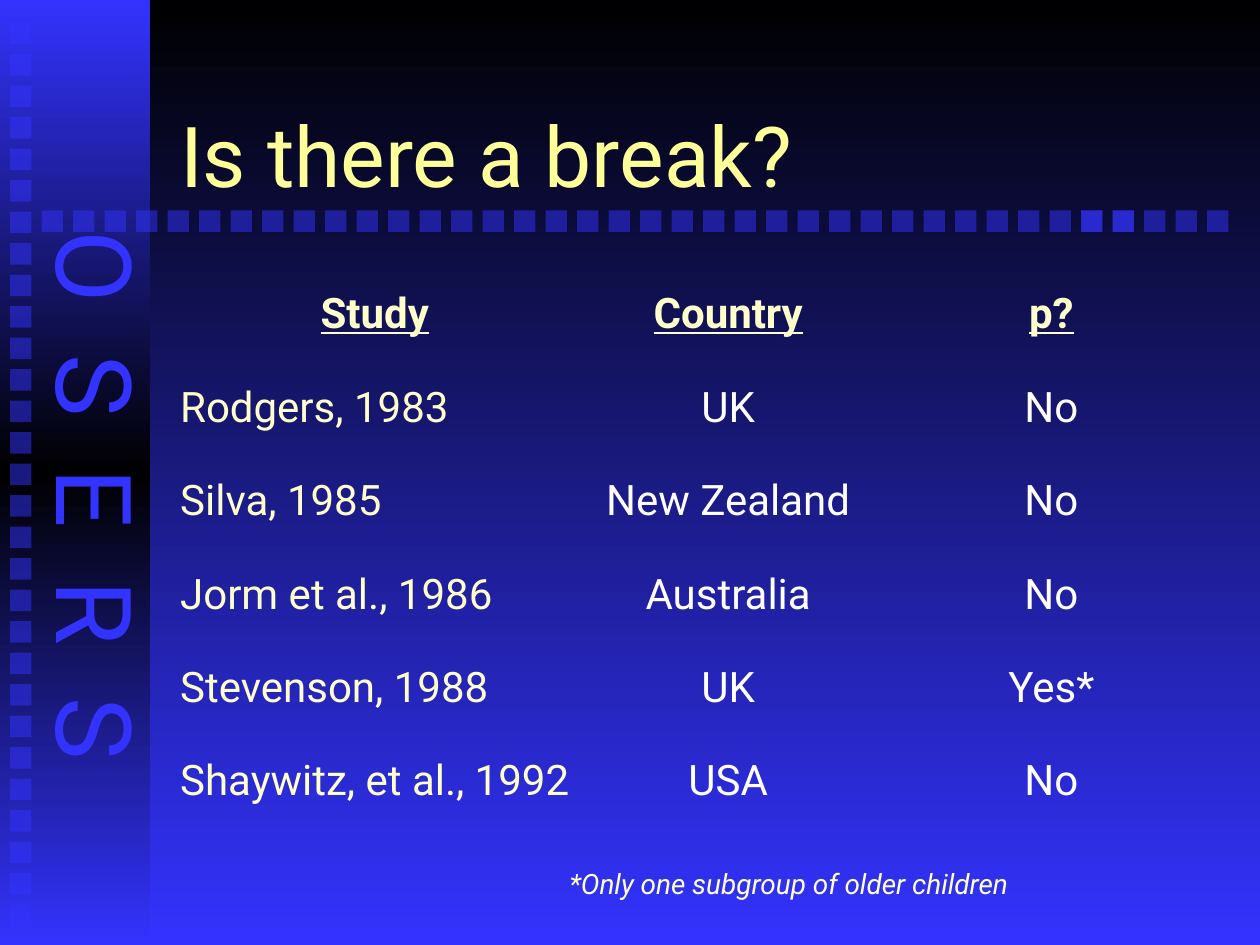
"""Build the slide that lists studies testing for a break."""
from copy import deepcopy
from dataclasses import dataclass
from typing import Any

from lxml.etree import SubElement
from pptx import Presentation
from pptx.dml.color import RGBColor
from pptx.dml.fill import FillFormat
from pptx.enum.shapes import MSO_SHAPE as Preset
from pptx.enum.text import MSO_ANCHOR as Anchor, MSO_AUTO_SIZE as AutoSize, PP_ALIGN as Align
from pptx.oxml.ns import qn
from pptx.slide import Slide
from pptx.text.text import TextFrame
from pptx.util import Inches, Pt


@dataclass(frozen=True)
class Theme:
    font: str = "Roboto"
    blue: str = "3333FF"
    black: str = "000000"
    white: str = "FFFFFF"
    cream: str = "FFFFCC"
    yellow: str = "FFFF99"
    title_size: int = 48
    banner_size: int = 60
    table_size: int = 24
    note_size: int = 16


@dataclass(frozen=True)
class Box:
    left: float
    top: float
    width: float
    height: float

    def lengths(self) -> tuple[int, ...]:
        """Return the box as slide lengths."""
        return tuple(Inches(value) for value in (self.left, self.top, self.width, self.height))


@dataclass(frozen=True)
class Strip:
    left: float
    top: float
    step_x: float
    step_y: float
    count: int


@dataclass(frozen=True)
class Study:
    name: str
    country: str
    significant: str


THEME = Theme()
SQUARE = 0.17
STEP = 0.25
STRIPS = (
    Strip(0.08, 0.18, 0, STEP, 29),
    Strip(0.33, 1.67, STEP, 0, 35),
    Strip(8.58, 1.67, STEP, 0, 5),
)
STUDIES = (
    Study("Rodgers, 1983", "UK", "No"),
    Study("Silva, 1985", "New Zealand", "No"),
    Study("Jorm et al., 1986", "Australia", "No"),
    Study("Stevenson, 1988", "UK", "Yes*"),
    Study("Shaywitz, et al., 1992", "USA", "No"),
)
COLUMN_WIDTHS = (3.29, 2.32, 2.81)
NO_GRID_STYLE = "{2D5ABB26-0587-4C30-8999-92F81FD0307C}"


def apply(target: Any, formats: dict[str, Any]) -> None:
    """Set each named attribute on the target."""
    for name, value in formats.items():
        setattr(target, name, value)


def write(frame: TextFrame, text: str, size: int, color: str,
          paragraph_formats: dict[str, Any] | None = None, **font_formats: Any) -> None:
    """Write one formatted paragraph into the frame."""
    paragraph = frame.paragraphs[0]
    apply(paragraph, {"alignment": Align.LEFT, **(paragraph_formats or {})})
    run = paragraph.add_run()
    run.text = text
    apply(run.font, {"name": THEME.font, "size": Pt(size), "bold": False, **font_formats})
    run.font.color.rgb = RGBColor.from_string(color)


def paint_gradient(fill: FillFormat, element: Any, colors: tuple[str, ...]) -> None:
    """Fill with evenly spaced colours from top to bottom."""
    fill.gradient()
    fill.gradient_angle = 270
    stop_list = element.find(".//" + qn("a:gsLst"))
    while len(stop_list) < len(colors):
        stop_list.append(deepcopy(stop_list[0]))
    for index, (stop, color) in enumerate(zip(fill.gradient_stops, colors)):
        stop.position = index / (len(colors) - 1)
        stop.color.rgb = RGBColor.from_string(color)


def add_side_panel(slide: Slide) -> None:
    """Add the gradient panel at the left edge."""
    panel = slide.shapes.add_shape(Preset.RECTANGLE, *Box(0, 0, 1.19, 7.5).lengths())
    panel.shadow.inherit = False
    panel.line.fill.background()
    paint_gradient(panel.fill, panel.element, (THEME.blue, THEME.black, THEME.blue))


def add_banner(slide: Slide) -> None:
    """Add the vertical lettering on the side panel."""
    frame = slide.shapes.add_textbox(*Box(0.25, 1.83, 0.92, 4.67).lengths()).text_frame
    apply(frame, {"word_wrap": True, "margin_left": 0, "margin_top": 0,
                  "margin_right": 0, "margin_bottom": 0})
    body = frame.paragraphs[0]._p.getparent().find(qn("a:bodyPr"))
    body.set("vert", "eaVert")
    write(frame, "O S E R S", THEME.banner_size, THEME.blue, {"line_spacing": 0.9})
    frame.paragraphs[0].runs[0].font._element.set("spc", "740")


def add_strip(slide: Slide, strip: Strip) -> None:
    """Add a group of evenly spaced translucent squares."""
    group = slide.shapes.add_group_shape()
    for index in range(strip.count):
        box = Box(strip.left + index * strip.step_x, strip.top + index * strip.step_y,
                  SQUARE, SQUARE)
        square = group.shapes.add_shape(Preset.RECTANGLE, *box.lengths())
        square.shadow.inherit = False
        square.line.fill.background()
        square.fill.solid()
        square.fill.fore_color.rgb = RGBColor.from_string(THEME.blue)
        color = square.element.spPr.find(".//" + qn("a:srgbClr"))
        SubElement(color, qn("a:alpha")).set("val", "50000")


def add_title(slide: Slide) -> None:
    """Place and write the title."""
    title = slide.shapes.title
    left, top, width, height = Box(1.33, 0.5, 8.42, 1.17).lengths()
    apply(title, {"left": left, "top": top, "width": width, "height": height})
    apply(title.text_frame, {"vertical_anchor": Anchor.BOTTOM, "word_wrap": True,
                             "auto_size": AutoSize.NONE})
    write(title.text_frame, "Is there a break?", THEME.title_size, THEME.yellow,
          {"line_spacing": 0.8})


def add_study_table(slide: Slide) -> None:
    """Add the table of studies without grid or banding."""
    frame = slide.shapes.add_table(len(STUDIES) + 1, len(COLUMN_WIDTHS),
                                   *Box(1.33, 2.25, 8.42, 4.45).lengths())
    table = frame.table
    apply(table, {"first_row": False, "horz_banding": False})
    frame.element.find(".//" + qn("a:tableStyleId")).text = NO_GRID_STYLE
    for column, width in zip(table.columns, COLUMN_WIDTHS):
        column.width = Inches(width)
    rows = (Study("Study", "Country", "p?"), *STUDIES)
    for row_index, study in enumerate(rows):
        header = row_index == 0
        for column_index, text in enumerate((study.name, study.country, study.significant)):
            name_column = column_index == 0
            cell = table.cell(row_index, column_index)
            cell.fill.background()
            write(cell.text_frame, text, THEME.table_size,
                  THEME.cream if header or name_column else THEME.white,
                  {"alignment": Align.LEFT if name_column and not header else Align.CENTER},
                  bold=header, underline=header)


def add_note(slide: Slide) -> None:
    """Add the note that explains the asterisk."""
    frame = slide.shapes.add_textbox(*Box(4.42, 6.83, 5.33, 0.5).lengths()).text_frame
    frame.word_wrap = True
    write(frame, "*Only one subgroup of older children", THEME.note_size, THEME.cream,
          italic=True)


def main() -> None:
    """Build and save the presentation."""
    presentation = Presentation()
    apply(presentation, {"slide_width": Inches(10), "slide_height": Inches(7.5)})
    slide = presentation.slides.add_slide(presentation.slide_layouts[5])
    paint_gradient(slide.background.fill, slide.element, (THEME.black, THEME.blue))
    add_side_panel(slide)
    add_banner(slide)
    for strip in STRIPS:
        add_strip(slide, strip)
    add_title(slide)
    add_note(slide)
    add_study_table(slide)
    presentation.save("out.pptx")


if __name__ == "__main__":
    main()
